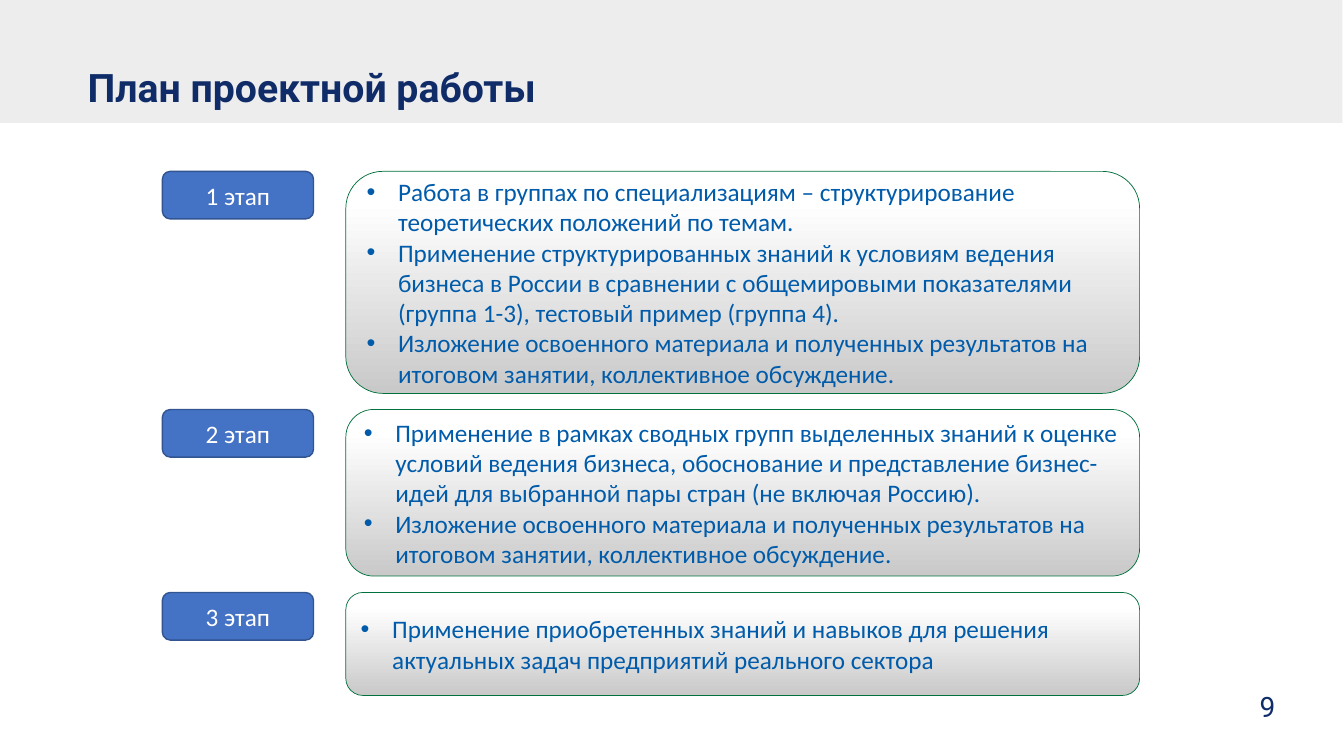
from lxml import etree
from pptx import Presentation
from pptx.dml.color import RGBColor
from pptx.enum import shapes, text
from pptx.oxml import ns
from pptx.util import Pt


def color(hex_string):
    return RGBColor.from_string(hex_string)


def add_run(paragraph, words, size, face, ink, bold=False):
    run = paragraph.add_run()
    run.text = words
    run.font.size = Pt(size)
    run.font.name = face
    run.font.bold = bold
    run.font.color.rgb = color(ink)


deck = Presentation()
deck.slide_width, deck.slide_height = Pt(960), Pt(540)
slide = deck.slides.add_slide(deck.slide_layouts[6])

band = slide.shapes.add_shape(shapes.MSO_SHAPE.RECTANGLE, Pt(-1.2), 0, Pt(960), Pt(87.8))
band.shadow.inherit = False
band.fill.solid()
band.fill.fore_color.rgb = color("EEEDED")
band.line.fill.background()

headings = [
    ("План проектной работы", (62.6, 45.4, 817.2, 32.4), 28, "0F2C68", True, text.PP_ALIGN.LEFT),
    ("9", (879.1, 492.5, 52.6, 24.5), 20, "102D69", False, text.PP_ALIGN.CENTER),
]
for words, place, size, ink, bold, align in headings:
    heading = slide.shapes.add_textbox(*[Pt(length) for length in place]).text_frame
    heading.word_wrap = True
    heading.margin_left = heading.margin_right = heading.margin_top = heading.margin_bottom = 0
    heading.paragraphs[0].alignment = align
    add_run(heading.paragraphs[0], words, size, "Roboto", ink, bold)

discussion = "Изложение освоенного материала и полученных результатов на итоговом занятии, коллективное обсуждение."
stages = [
    (122.4, 158.6, [
        "Работа в группах по специализациям – структурирование теоретических положений по темам.",
        "Применение структурированных знаний к условиям ведения бизнеса в России в сравнении с общемировыми показателями (группа 1-3), тестовый пример (группа 4).",
        discussion,
    ]),
    (292.5, 119, [
        "Применение в рамках сводных групп выделенных знаний к оценке условий ведения бизнеса, обоснование и представление бизнес-идей для выбранной пары стран (не включая Россию).",
        discussion,
    ]),
    (423.2, 73.6, [
        "Применение приобретенных знаний и навыков для решения актуальных задач предприятий реального сектора",
    ]),
]

for number, (top, height, tasks) in enumerate(stages, 1):
    label = slide.shapes.add_shape(
        shapes.MSO_SHAPE.ROUNDED_RECTANGLE, Pt(116), Pt(top), Pt(108), Pt(34))
    label.fill.solid()
    label.fill.fore_color.rgb = color("4472C4")
    label.line.color.rgb = color("325491")
    label.line.width = Pt(1)
    label.text_frame.paragraphs[0].alignment = text.PP_ALIGN.CENTER
    add_run(label.text_frame.paragraphs[0], f"{number} этап", 18, "Calibri", "FFFFFF")

    panel = slide.shapes.add_shape(
        shapes.MSO_SHAPE.ROUNDED_RECTANGLE, Pt(247), Pt(top), Pt(567), Pt(height))
    panel.fill.gradient()
    panel.fill.gradient_angle = 90
    for stop, position, shade in zip(panel.fill.gradient_stops, (0, 0.86), ("C9C9C9", "FFFFFF")):
        stop.position = position
        stop.color.rgb = color(shade)
    panel.line.color.rgb = color("00703C")
    panel.line.width = Pt(0.5)

    for shape in (label, panel):
        shape.shadow.inherit = False
        shape.text_frame.word_wrap = True
        shape.text_frame.vertical_anchor = text.MSO_ANCHOR.MIDDLE

    for index, task in enumerate(tasks):
        frame = panel.text_frame
        item = frame.add_paragraph() if index else frame.paragraphs[0]
        item.alignment = text.PP_ALIGN.LEFT
        properties = item._p.get_or_add_pPr()
        properties.set("marL", str(Pt(22.5)))
        properties.set("indent", str(Pt(-22.5)))
        etree.SubElement(properties, ns.qn("a:buFont")).set("typeface", "Arial")
        etree.SubElement(properties, ns.qn("a:buChar")).set("char", "•")
        add_run(item, task, 18, "Calibri", "005BAA")

deck.save("out.pptx")
